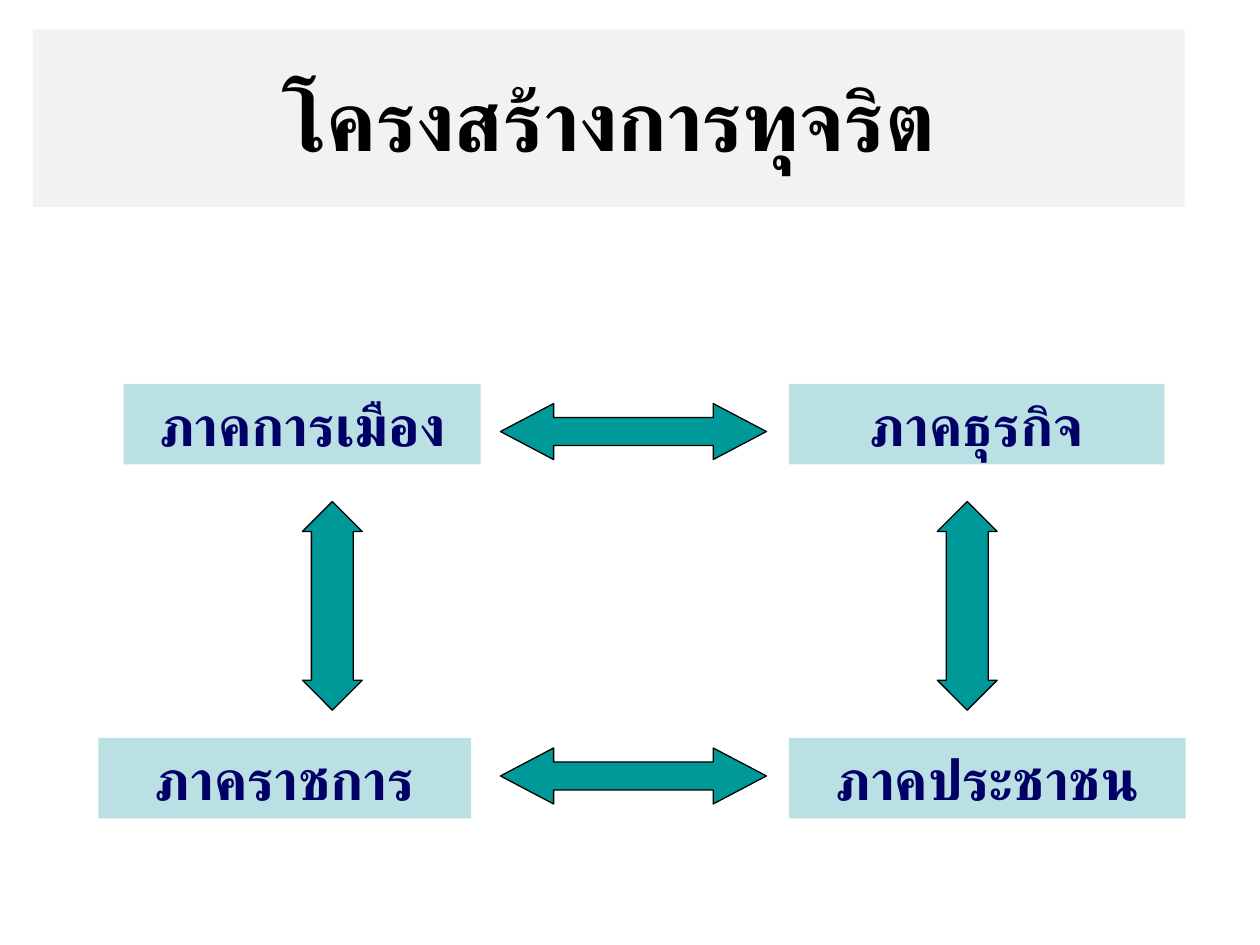
import pptx
import pptx.util
import pptx.dml.color
import pptx.enum.shapes
import pptx.enum.text
import pptx.oxml.ns
import lxml.etree

Pt = pptx.util.Pt
SHAPES = pptx.enum.shapes.MSO_SHAPE

THEME = {
    "font": "Karla",
    "title_size": 48,
    "sector_size": 32,
    "title_fill": "F2F2F2",
    "title_text": "000000",
    "sector_fill": "BBE0E3",
    "sector_text": "000066",
    "arrow_fill": "009999",
    "arrow_line": "000000",
}

TITLE = ("โครงสร้างการทุจริต", 18.9, 16.8, 658, 101.4)
SECTOR_HEIGHT = 46
SECTORS = [
    ("ภาคการเมือง", 70.7, 219.4, 204),
    ("ภาคธุรกิจ", 450.8, 219.4, 214.6),
    ("ภาคราชการ", 56.2, 421.7, 213),
    ("ภาคประชาชน", 450.8, 421.7, 226.7),
]
HORIZONTAL_ARROWS = {"left": 286, "tops": (230.6, 427.4), "size": (152, 32), "head": 0.95}
VERTICAL_ARROWS = {"lefts": (172.8, 535.6), "top": 286.6, "size": (34.2, 119.2), "head": 0.7}


def color(name):
    return pptx.dml.color.RGBColor.from_string(THEME[name])


def add_filled_shape(slide, kind, left, top, width, height, fill):
    shape = slide.shapes.add_shape(kind, Pt(left), Pt(top), Pt(width), Pt(height))
    shape.shadow.inherit = False
    shape.fill.solid()
    shape.fill.fore_color.rgb = color(fill)
    shape.line.fill.background()
    return shape


def write_text(shape, text, *, size, text_color):
    frame = shape.text_frame
    frame.word_wrap = True
    frame.vertical_anchor = pptx.enum.text.MSO_ANCHOR.MIDDLE
    paragraph = frame.paragraphs[0]
    paragraph.alignment = pptx.enum.text.PP_ALIGN.CENTER
    run = paragraph.add_run()
    run.text = text
    run.font.name = THEME["font"]
    run.font.size = Pt(THEME[size])
    run.font.bold = True
    run.font.color.rgb = color(text_color)
    properties = run.font._element
    for script in ("a:ea", "a:cs"):
        element = lxml.etree.SubElement(properties, pptx.oxml.ns.qn(script))
        element.set("typeface", THEME["font"])


def add_arrow(slide, kind, left, top, size, head):
    arrow = add_filled_shape(slide, kind, left, top, *size, "arrow_fill")
    arrow.line.color.rgb = color("arrow_line")
    arrow.line.width = Pt(0.75)
    arrow.adjustments[0] = 0.5
    arrow.adjustments[1] = head


def main():
    presentation = pptx.Presentation()
    presentation.slide_width = Pt(720)
    presentation.slide_height = Pt(540)
    slide = presentation.slides.add_slide(presentation.slide_layouts[6])

    title, *title_box = TITLE
    shape = add_filled_shape(slide, SHAPES.RECTANGLE, *title_box, "title_fill")
    write_text(shape, title, size="title_size", text_color="title_text")

    for sector, left, top, width in SECTORS:
        shape = add_filled_shape(
            slide, SHAPES.RECTANGLE, left, top, width, SECTOR_HEIGHT, "sector_fill"
        )
        write_text(shape, sector, size="sector_size", text_color="sector_text")

    across = HORIZONTAL_ARROWS
    for top in across["tops"]:
        add_arrow(slide, SHAPES.LEFT_RIGHT_ARROW, across["left"], top, across["size"], across["head"])

    upright = VERTICAL_ARROWS
    for left in upright["lefts"]:
        add_arrow(slide, SHAPES.UP_DOWN_ARROW, left, upright["top"], upright["size"], upright["head"])

    presentation.save("out.pptx")


if __name__ == "__main__":
    main()
